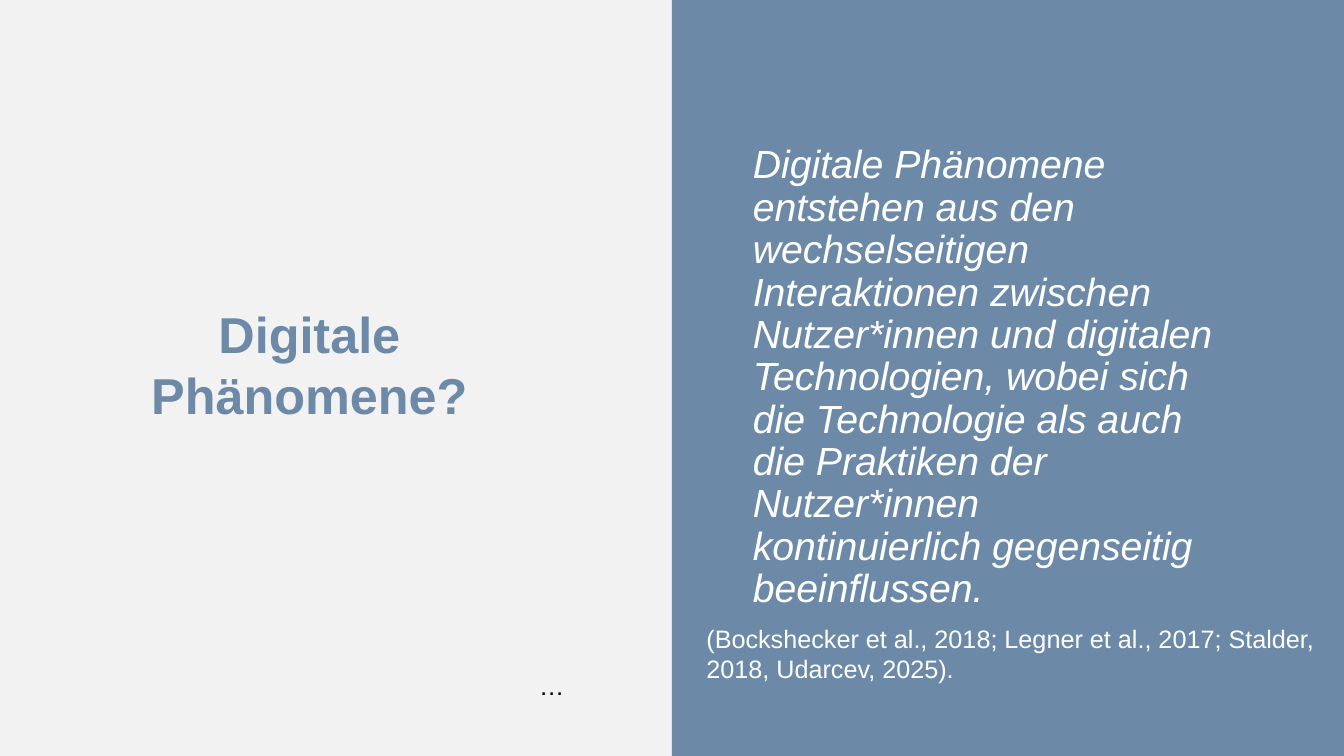
from dataclasses import dataclass

from pptx import Presentation
from pptx import util as u
from pptx.dml.color import RGBColor
from pptx.enum import shapes, text

BLUE = RGBColor(0x6C, 0x8A, 0xA8)
WHITE = RGBColor(0xFF, 0xFF, 0xFF)
BLACK = RGBColor(0x00, 0x00, 0x00)
LIGHT_GREY = RGBColor(0xF2, 0xF2, 0xF2)
FONT = "Arial"


@dataclass
class Box:
    left: float
    top: float
    width: float
    height: float

    def lengths(self) -> tuple:
        return tuple(u.Pt(value) for value in (self.left, self.top, self.width, self.height))


@dataclass
class Wording:
    content: str
    size: float
    color: RGBColor
    bold: bool = False
    italic: bool = False
    align: text.PP_ALIGN = text.PP_ALIGN.LEFT
    anchor: text.MSO_ANCHOR = text.MSO_ANCHOR.TOP
    fit: text.MSO_AUTO_SIZE = text.MSO_AUTO_SIZE.SHAPE_TO_FIT_TEXT
    line_spacing: float = 1.0


def write(shape, wording: Wording) -> None:
    frame = shape.text_frame
    frame.word_wrap = True
    frame.auto_size = wording.fit
    frame.vertical_anchor = wording.anchor
    paragraph = frame.paragraphs[0]
    paragraph.alignment = wording.align
    paragraph.line_spacing = wording.line_spacing
    run = paragraph.add_run()
    run.text = wording.content
    run.font.name = FONT
    run.font.size = u.Pt(wording.size)
    run.font.bold = wording.bold
    run.font.italic = wording.italic
    run.font.color.rgb = wording.color


def add_title(slide, box: Box, wording: Wording) -> None:
    title = slide.shapes.title
    title.left, title.top, title.width, title.height = box.lengths()
    write(title, wording)


def add_text(slide, box: Box, wording: Wording) -> None:
    write(slide.shapes.add_textbox(*box.lengths()), wording)


def add_panel(slide, box: Box):
    panel = slide.shapes.add_shape(shapes.MSO_SHAPE.RECTANGLE, *box.lengths())
    panel.shadow.inherit = False
    panel.fill.solid()
    panel.fill.fore_color.rgb = BLUE
    panel.line.fill.background()
    return panel


def main() -> None:
    presentation = Presentation()
    presentation.slide_width, presentation.slide_height = u.Pt(960), u.Pt(540)
    slide = presentation.slides.add_slide(presentation.slide_layouts[5])
    slide.background.fill.solid()
    slide.background.fill.fore_color.rgb = LIGHT_GREY

    # Left half: question and ellipsis
    add_title(slide, Box(37.44, 213.12, 367.2, 94.32),
              Wording("Digitale Phänomene?", 36, BLUE, bold=True, align=text.PP_ALIGN.CENTER))
    add_text(slide, Box(378, 475.2, 239.76, 28.8), Wording("…", 18, BLACK))

    # Right half: definition on a blue panel
    add_panel(slide, Box(480, -7.92, 480, 553.68))
    definition = add_panel(slide, Box(530.64, 50.4, 346.32, 439.2))
    write(definition, Wording(
        "Digitale Phänomene entstehen aus den wechselseitigen Interaktionen zwischen "
        "Nutzer*innen und digitalen Technologien, wobei sich die Technologie als auch "
        "die Praktiken der Nutzer*innen kontinuierlich gegenseitig beeinflussen.",
        28, WHITE, italic=True, anchor=text.MSO_ANCHOR.MIDDLE,
        fit=text.MSO_AUTO_SIZE.NONE, line_spacing=0.9))

    # Sources
    add_text(slide, Box(497.52, 441.36, 480.24, 51.12), Wording(
        "(Bockshecker et al., 2018; Legner et al., 2017; Stalder, 2018, Udarcev, 2025).",
        18, WHITE))

    presentation.save("out.pptx")


if __name__ == "__main__":
    main()
